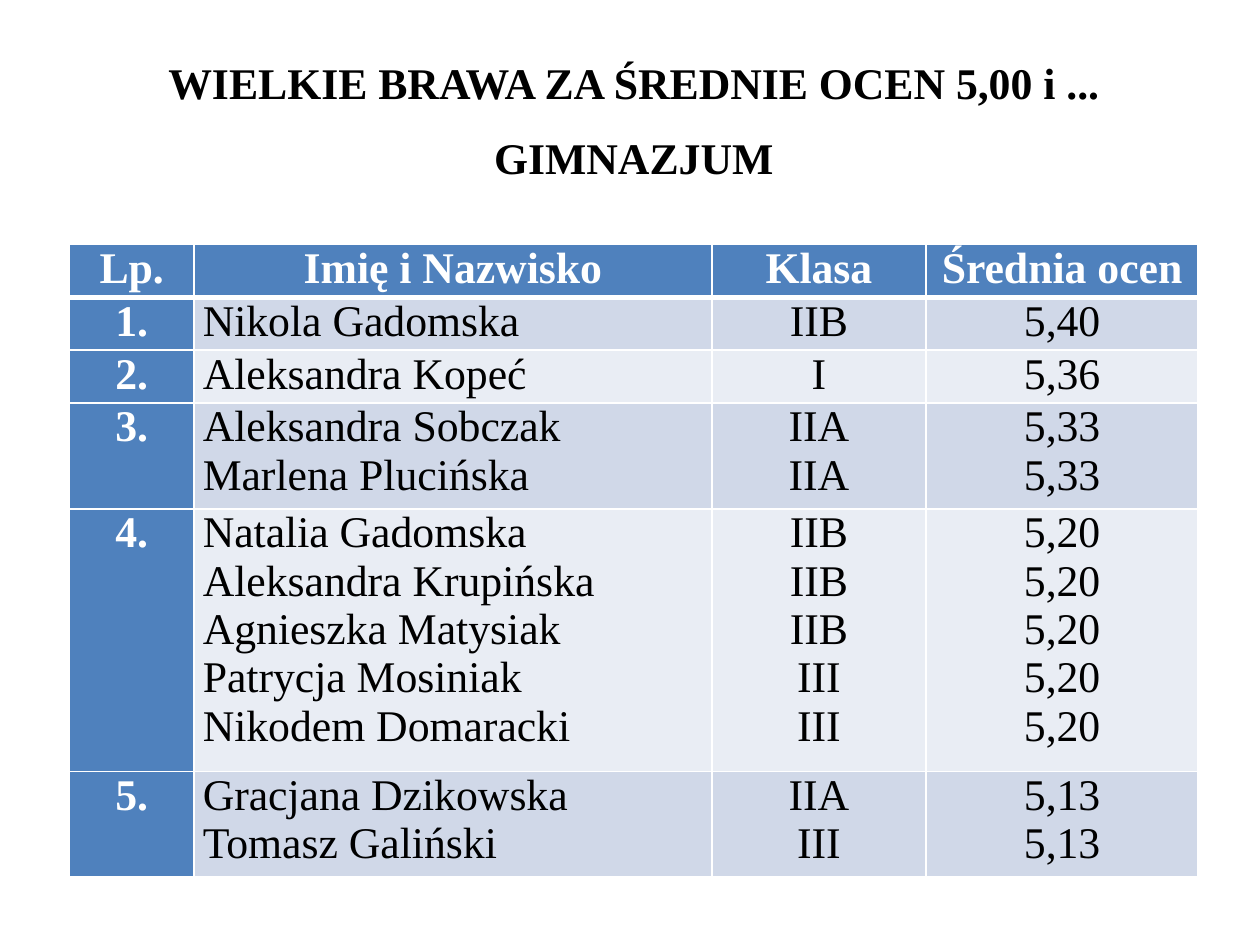
from lxml.etree import SubElement as Sub
from pptx import Presentation
from pptx.dml.color import RGBColor
from pptx.enum.text import MSO_ANCHOR as Anchor, MSO_AUTO_SIZE as Fit, PP_ALIGN as Align
from pptx.oxml.ns import qn
from pptx.util import Inches, Pt

WHITE, BLACK, BLUE = "FFFFFF", "000000", "4F81BD"
BANDS = ["D0D8E8", "E9EDF4"]


def write(frame, text, color=BLACK, bold=False, align=Align.CENTER):
    frame.text = text
    for para in frame.paragraphs:
        para.alignment = align
        font = para.runs[0].font
        font.name, font.size, font.bold = "Times New Roman", Pt(25), bold
        font.color.rgb = RGBColor.from_string(color)


def style(cell, fill, base):
    cell.margin_left = cell.margin_right = Inches(0.07)
    cell.margin_top = cell.margin_bottom = 0
    props = cell._tc.get_or_add_tcPr()
    for side, width in (("L", 1), ("R", 1), ("T", 1), ("B", base)):
        line = Sub(props, qn(f"a:ln{side}"), w=str(Pt(width)))
        Sub(Sub(line, qn("a:solidFill")), qn("a:srgbClr"), val=WHITE)
    cell.fill.solid()
    cell.fill.fore_color.rgb = RGBColor.from_string(fill)


prs = Presentation()
prs.slide_width, prs.slide_height = Inches(10), Inches(7.5)
slide = prs.slides.add_slide(prs.slide_layouts[5])

# Title
title = slide.shapes.title
title.left, title.top = Inches(1.2), Inches(0.27)
title.width, title.height = Inches(7.66), Inches(1.14)
frame = title.text_frame
frame.auto_size, frame.word_wrap = Fit.NONE, False
frame.vertical_anchor, frame.margin_top = Anchor.TOP, Inches(0.17)
write(frame, "WIELKIE BRAWA ZA ŚREDNIE OCEN 5,00 i ...", bold=True)

# School level
level = slide.shapes.add_textbox(Inches(3.65), Inches(0.99), Inches(2.76), Inches(0.52))
level.text_frame.word_wrap = True
write(level.text_frame, "GIMNAZJUM", bold=True)

# Results: names, classes and the average each group shares
heads = ["Lp.", "Imię i Nazwisko", "Klasa", "Średnia ocen"]
groups = [
    (["Nikola Gadomska"], ["IIB"], "5,40"),
    (["Aleksandra Kopeć"], ["I"], "5,36"),
    (["Aleksandra Sobczak", "Marlena Plucińska"], ["IIA", "IIA"], "5,33"),
    (["Natalia Gadomska", "Aleksandra Krupińska", "Agnieszka Matysiak",
      "Patrycja Mosiniak", "Nikodem Domaracki"],
     ["IIB", "IIB", "IIB", "III", "III"], "5,20"),
    (["Gracjana Dzikowska", "Tomasz Galiński"], ["IIA", "III"], "5,13"),
]
rows = [heads]
for num, (names, forms, mean) in enumerate(groups, 1):
    rows.append([f"{num}.", "\n".join(names), "\n".join(forms),
                 "\n".join([mean] * len(names))])

# Table
widths = [0.99, 4.11, 1.7, 2.16]
heights = [0.42, 0.42, 0.42, 0.84, 2.08, 0.83]
table = slide.shapes.add_table(len(rows), len(heads), Inches(0.55), Inches(1.94),
                               Inches(sum(widths)), Inches(sum(heights))).table
for col, width in zip(table.columns, widths):
    col.width = Inches(width)
for r, (row, height) in enumerate(zip(rows, heights)):
    table.rows[r].height = Inches(height)
    for c, text in enumerate(row):
        cell = table.cell(r, c)
        head = r == 0 or c == 0
        style(cell, BLUE if head else BANDS[(r - 1) % 2], 3 if r == 0 else 1)
        write(cell.text_frame, text, color=WHITE if head else BLACK, bold=head,
              align=Align.LEFT if c == 1 and not head else Align.CENTER)

prs.save("out.pptx")
